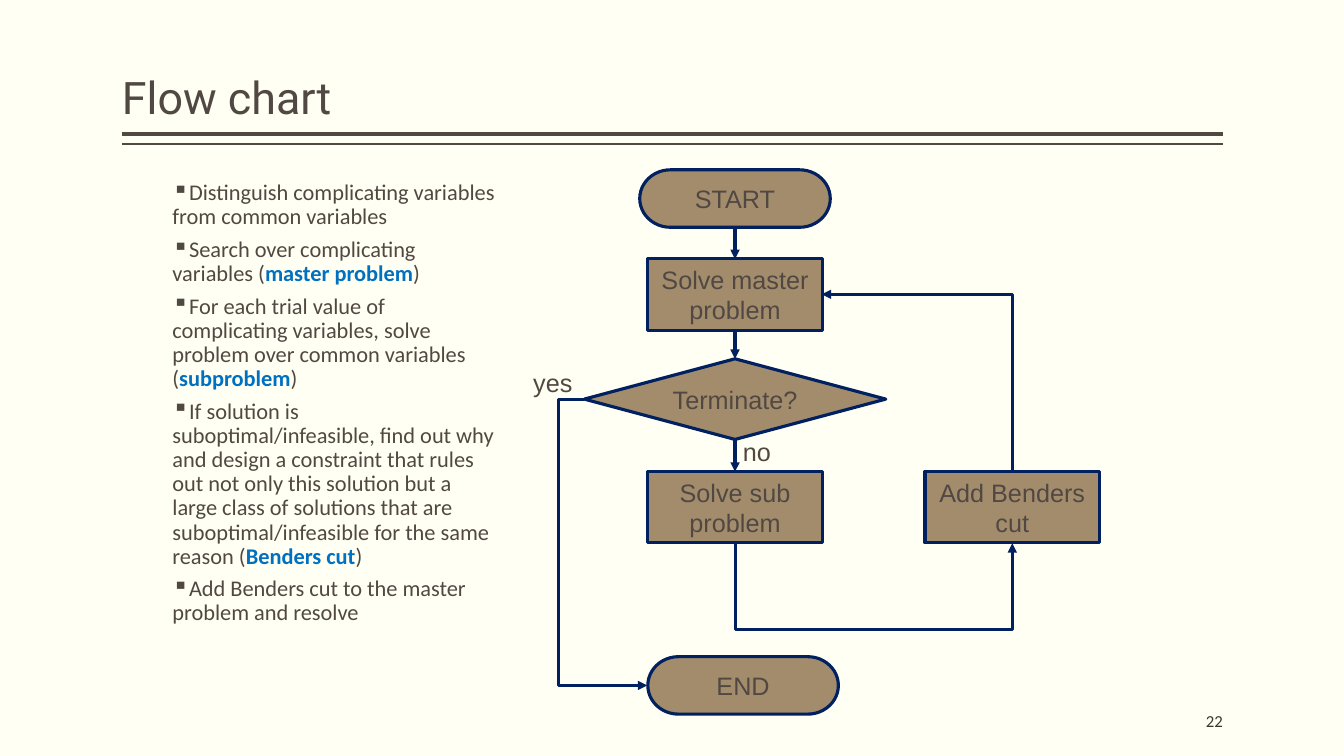
from lxml import etree
from pptx import Presentation, util as u
from pptx.dml.color import RGBColor
from pptx.enum import shapes as s, text as t
from pptx.oxml.ns import qn

THEME = {
    "paper": RGBColor.from_string("FFFFF3"),
    "ink": RGBColor.from_string("514843"),
    "footer": RGBColor.from_string("3D3632"),
    "accent": RGBColor.from_string("0070C0"),
    "box": RGBColor.from_string("A28C6C"),
    "flow": RGBColor.from_string("002060"),
    "title": ("Roboto", 32), "body": ("Calibri", 16),
    "chart": ("Arial", 18), "number": ("Calibri", 12),
}
WIDTH, HEIGHT = 13.33, 7.5
LEFT, RIGHT = 1.21, 12.13
SPINE, CUT_COLUMN = 7.29, 10.04
MASTER_ROW, TEST_ROW, SUB_ROW, END_ROW = 2.92, 3.96, 5.03, 6.8
BOX, PILL, DIAMOND = (1.73, 0.71), (1.89, 0.57), (2.99, 0.8)


def style(paragraph, role, color="ink"):
    for run in paragraph.runs:
        run.font.name, size = THEME[role]
        run.font.size = u.Pt(size)
        run.font.color.rgb = THEME[color]


def link(start, end, color="flow", weight=2.25, arrow=True, bend=None, adjust=None, turned=False):
    """Join two points; a turned link leaves vertically, as an elbow rotated by 270 degrees."""
    ends = [start, end]
    if turned:
        mid_x, mid_y = (start[0] + end[0]) / 2, (start[1] + end[1]) / 2
        ends = [(mid_x - (y - mid_y), mid_y + (x - mid_x)) for x, y in ends]
    kind = s.MSO_CONNECTOR.ELBOW if bend else s.MSO_CONNECTOR.STRAIGHT
    connector = slide.shapes.add_connector(kind, *[u.Inches(v) for point in ends for v in point])
    connector.line.color.rgb = THEME[color]
    connector.line.width = u.Pt(weight)
    properties = connector._element.spPr
    etree.SubElement(properties, qn("a:effectLst"))
    if arrow:
        etree.SubElement(connector.line._get_or_add_ln(), qn("a:tailEnd"), type="triangle")
    if turned:
        properties.find(qn("a:xfrm")).set("rot", str(270 * 60000))
    if bend:
        geometry = properties.find(qn("a:prstGeom"))
        geometry.set("prst", bend)
        if adjust is not None:
            guides = geometry.find(qn("a:avLst"))
            etree.SubElement(guides, qn("a:gd"), name="adj1", fmla=f"val {round(adjust * 100000)}")


deck = Presentation()
deck.slide_width, deck.slide_height = u.Inches(WIDTH), u.Inches(HEIGHT)
slide = deck.slides.add_slide(deck.slide_layouts[5])
slide.background.fill.solid()
slide.background.fill.fore_color.rgb = THEME["paper"]

# Heading and its double rule
for rule_y, weight in ((1.33, 3), (1.43, 1)):
    link((LEFT, rule_y), (RIGHT, rule_y), "ink", weight, arrow=False)
title = slide.shapes.title
title.left, title.top = u.Inches(LEFT), u.Inches(0.08)
title.width, title.height = u.Inches(RIGHT - LEFT), u.Inches(1.2)
heading = title.text_frame
heading.text = "Flow chart"
heading.auto_size = t.MSO_AUTO_SIZE.NONE
heading.vertical_anchor = t.MSO_ANCHOR.BOTTOM
heading.margin_left = heading.margin_right = 0
heading.paragraphs[0].alignment = t.PP_ALIGN.LEFT
heading.paragraphs[0].line_spacing = 0.9
style(heading.paragraphs[0], "title")

# Steps of the method: text before the key term, key term, text after it
steps = [
    ("Distinguish complicating variables from common variables",),
    ("Search over complicating variables (", "master problem", ")"),
    ("For each trial value of complicating variables, solve problem over common variables (",
     "subproblem", ")"),
    ("If solution is suboptimal/infeasible, find out why and design a constraint that rules out "
     "not only this solution but a large class of solutions that are suboptimal/infeasible for "
     "the same reason (", "Benders cut", ")"),
    ("Add Benders cut to the master problem and resolve",),
]
method = slide.shapes.add_textbox(u.Inches(LEFT), u.Inches(1.75), u.Inches(3.71), u.Inches(5)).text_frame
method.word_wrap = True
method.margin_left = method.margin_right = 0
for index, parts in enumerate(steps):
    step = method.add_paragraph() if index else method.paragraphs[0]
    step.level = 1
    step.line_spacing = 0.9
    step.space_before = u.Pt(6 if index else 0)
    layout = step._p.get_or_add_pPr()
    layout.set("marL", str(u.Inches(0.5)))
    layout.set("indent", "0")
    etree.SubElement(layout, qn("a:buChar"), char="▪")
    for part in parts:
        step.add_run().text = part
    style(step, "body")
    for term in step.runs[1:2]:
        term.font.bold = True
        term.font.color.rgb = THEME["accent"]

# Flow chart nodes, placed by their centres
process, terminator = s.MSO_SHAPE.FLOWCHART_PROCESS, s.MSO_SHAPE.FLOWCHART_TERMINATOR
nodes = [
    ("START", terminator, SPINE, 1.97, PILL),
    ("Solve master problem", process, SPINE, MASTER_ROW, BOX),
    ("Terminate?", s.MSO_SHAPE.FLOWCHART_DECISION, SPINE, TEST_ROW, DIAMOND),
    ("Solve sub problem", process, SPINE, SUB_ROW, BOX),
    ("Add Benders cut", process, CUT_COLUMN, SUB_ROW, BOX),
    ("END", terminator, SPINE + 0.08, END_ROW, PILL),
]
for label, outline, x, y, (w, h) in nodes:
    node = slide.shapes.add_shape(outline, *[u.Inches(v) for v in (x - w / 2, y - h / 2, w, h)])
    node.shadow.inherit = False
    node.fill.solid()
    node.fill.fore_color.rgb = THEME["box"]
    node.line.color.rgb = THEME["flow"]
    node.line.width = u.Pt(2.25)
    node.text_frame.text = label
    node.text_frame.word_wrap = True
    node.text_frame.vertical_anchor = t.MSO_ANCHOR.MIDDLE
    node.text_frame.paragraphs[0].alignment = t.PP_ALIGN.CENTER
    style(node.text_frame.paragraphs[0], "chart")

# Links between the nodes
for top, bottom in ((2.25, 2.57), (3.28, 3.56), (4.36, 4.68)):
    link((SPINE, top), (SPINE, bottom))
link((SPINE, 5.38), (CUT_COLUMN, 5.39), bend="bentConnector3", adjust=88, turned=True)
link((CUT_COLUMN, 4.68), (8.15, MASTER_ROW), bend="bentConnector2", turned=True)
link((5.79, TEST_ROW), (6.42, END_ROW), bend="bentConnector3", adjust=-0.395)

# Answers at the decision
for answer, x, y, w in (("yes", 5.19, 3.59, 0.59), ("no", 7.27, 4.28, 0.48)):
    caption = slide.shapes.add_textbox(*[u.Inches(v) for v in (x, y, w, 0.4)]).text_frame
    caption.text = answer
    caption.word_wrap = False
    style(caption.paragraphs[0], "chart")

page = slide.shapes.add_textbox(u.Inches(RIGHT - 2), u.Inches(6.95), u.Inches(2), u.Inches(0.4)).text_frame
page.text = "22"
page.word_wrap = True
page.margin_left = page.margin_right = 0
page.vertical_anchor = t.MSO_ANCHOR.MIDDLE
page.paragraphs[0].alignment = t.PP_ALIGN.RIGHT
style(page.paragraphs[0], "number", "footer")

deck.save("out.pptx")
